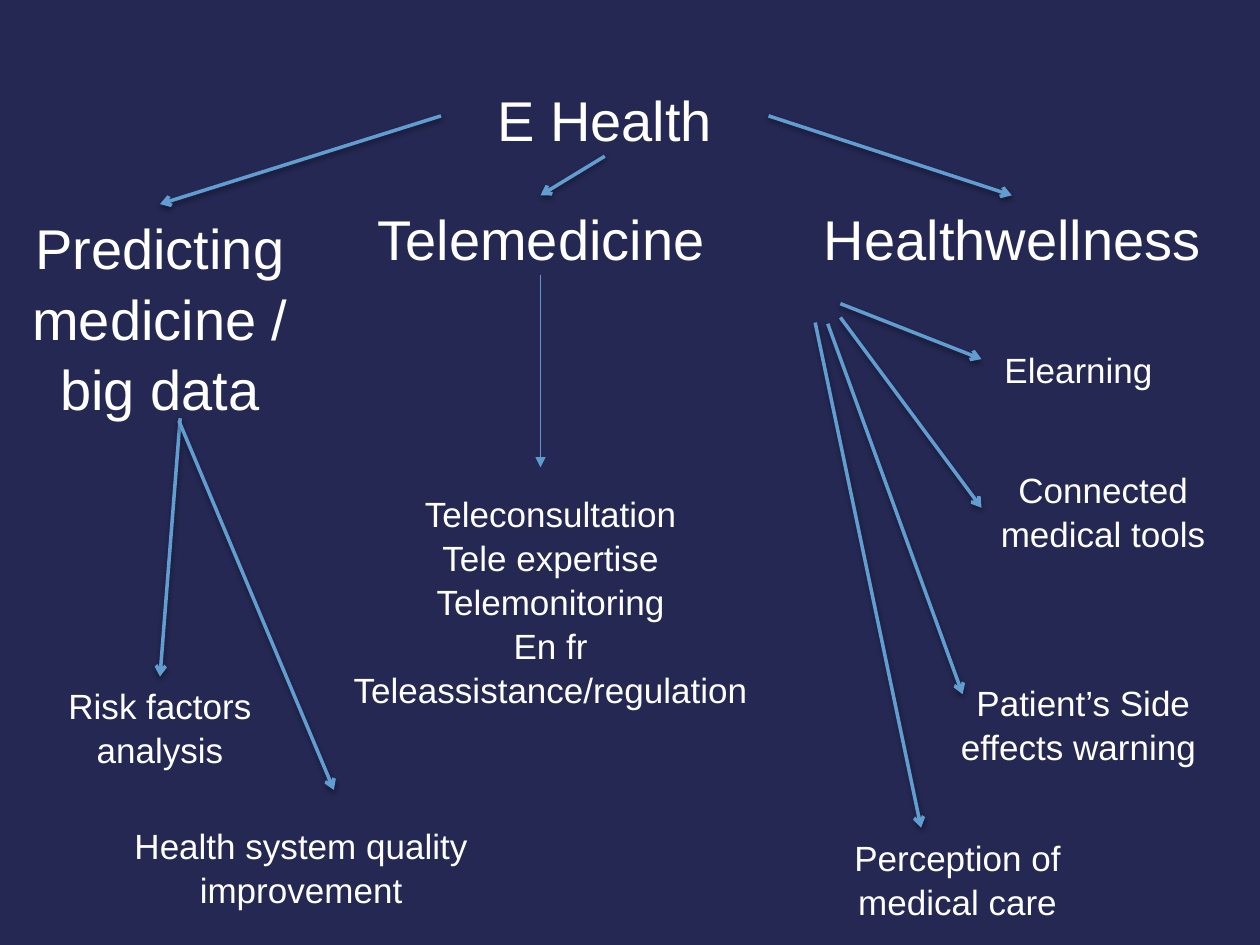
from typing import NamedTuple

from lxml import etree
from pptx import Presentation
from pptx.dml.color import RGBColor
from pptx.enum.shapes import MSO_CONNECTOR
from pptx.enum.text import PP_ALIGN
from pptx.oxml.ns import qn
from pptx.util import Pt

STRAIGHT = MSO_CONNECTOR.STRAIGHT
CENTER = PP_ALIGN.CENTER
PX = 9144  # 100 px to the inch
BACKGROUND, WHITE, BLUE, THIN_BLUE = "242852", "FFFFFF", "629DD1", "5D9ACF"
HEADING, BODY = 32, 20
LINE_SPACING = 1.05


class Label(NamedTuple):
    left: int
    top: int
    width: int
    height: int
    size: int
    lines: tuple[str, ...]


class Arrow(NamedTuple):
    x1: int
    y1: int
    x2: int
    y2: int
    color: str = BLUE
    weight: float = 2
    head: str = "arrow"
    shadow: bool = True


LABELS = [
    # Topic and its three branches
    Label(350, 60, 260, 64, HEADING, ("E Health",)),
    Label(-3, 162, 260, 172, HEADING, ("Predicting medicine / big data",)),
    Label(280, 155, 299, 64, HEADING, ("Telemedicine",)),
    Label(634, 155, 339, 64, HEADING, ("Healthwellness",)),
    # Predicting medicine
    Label(-3, 537, 260, 77, BODY, ("Risk factors analysis",)),
    Label(87, 648, 304, 77, BODY, ("Health system quality improvement",)),
    # Telemedicine
    Label(260, 384, 354, 212, BODY, (
        "Teleconsultation", "Tele expertise", "Telemonitoring",
        "En fr Teleassistance/regulation")),
    # Healthwellness
    Label(726, 270, 260, 44, BODY, ("Elearning",)),
    Label(779, 365, 193, 77, BODY, ("Connected medical tools",)),
    Label(726, 534, 260, 77, BODY, (" Patient’s Side effects warning",)),
    Label(630, 657, 260, 77, BODY, ("Perception of medical care",)),
]

ARROWS = [
    # Healthwellness to its items
    Arrow(667, 241, 779, 285),
    Arrow(667, 252, 779, 403),
    Arrow(657, 257, 764, 551),
    Arrow(647, 256, 731, 657),
    # Predicting medicine to its items
    Arrow(143, 332, 127, 537),
    Arrow(142, 334, 265, 627),
    # Topic to branches
    Arrow(610, 92, 803, 155),
    Arrow(350, 92, 127, 162),
    Arrow(480, 124, 429, 155),
    # Telemedicine to its list
    Arrow(429, 218, 429, 371, THIN_BLUE, 0.75, "triangle", False),
]


def rgb(color: str) -> RGBColor:
    return RGBColor.from_string(color)


def add_label(slide, label: Label) -> None:
    box = slide.shapes.add_textbox(
        *(value * PX for value in (label.left, label.top, label.width, label.height)))
    frame = box.text_frame
    frame.word_wrap = True
    frame.text = "\n".join(label.lines)
    for paragraph in frame.paragraphs:
        paragraph.alignment = CENTER
        paragraph.line_spacing = LINE_SPACING
        font_format = {"name": "Arial", "size": Pt(label.size)}
        for name, value in font_format.items():
            setattr(paragraph.font, name, value)
        paragraph.font.color.rgb = rgb(WHITE)


def add_arrow(slide, arrow: Arrow) -> None:
    connector = slide.shapes.add_connector(
        STRAIGHT, *(value * PX for value in (arrow.x1, arrow.y1, arrow.x2, arrow.y2)))
    connector.line.color.rgb = rgb(arrow.color)
    connector.line.width = Pt(arrow.weight)
    etree.SubElement(connector.line._get_or_add_ln(), qn("a:tailEnd"), type=arrow.head)

    # An empty effect list removes the theme shadow
    effects = etree.SubElement(connector._element.spPr, qn("a:effectLst"))
    if arrow.shadow:
        shadow = etree.SubElement(
            effects, qn("a:outerShdw"), blurRad=str(Pt(3.1)), dist=str(Pt(1.6)),
            dir="5400000", rotWithShape="0")
        shade = etree.SubElement(shadow, qn("a:srgbClr"), val="000000")
        etree.SubElement(shade, qn("a:alpha"), val="38000")


def main() -> None:
    presentation = Presentation()
    presentation.slide_width = 1000 * PX
    presentation.slide_height = 750 * PX
    slide = presentation.slides.add_slide(presentation.slide_layouts[6])
    slide.background.fill.solid()
    slide.background.fill.fore_color.rgb = rgb(BACKGROUND)

    for label in LABELS:
        add_label(slide, label)
    for arrow in ARROWS:
        add_arrow(slide, arrow)

    presentation.save("out.pptx")


if __name__ == "__main__":
    main()
